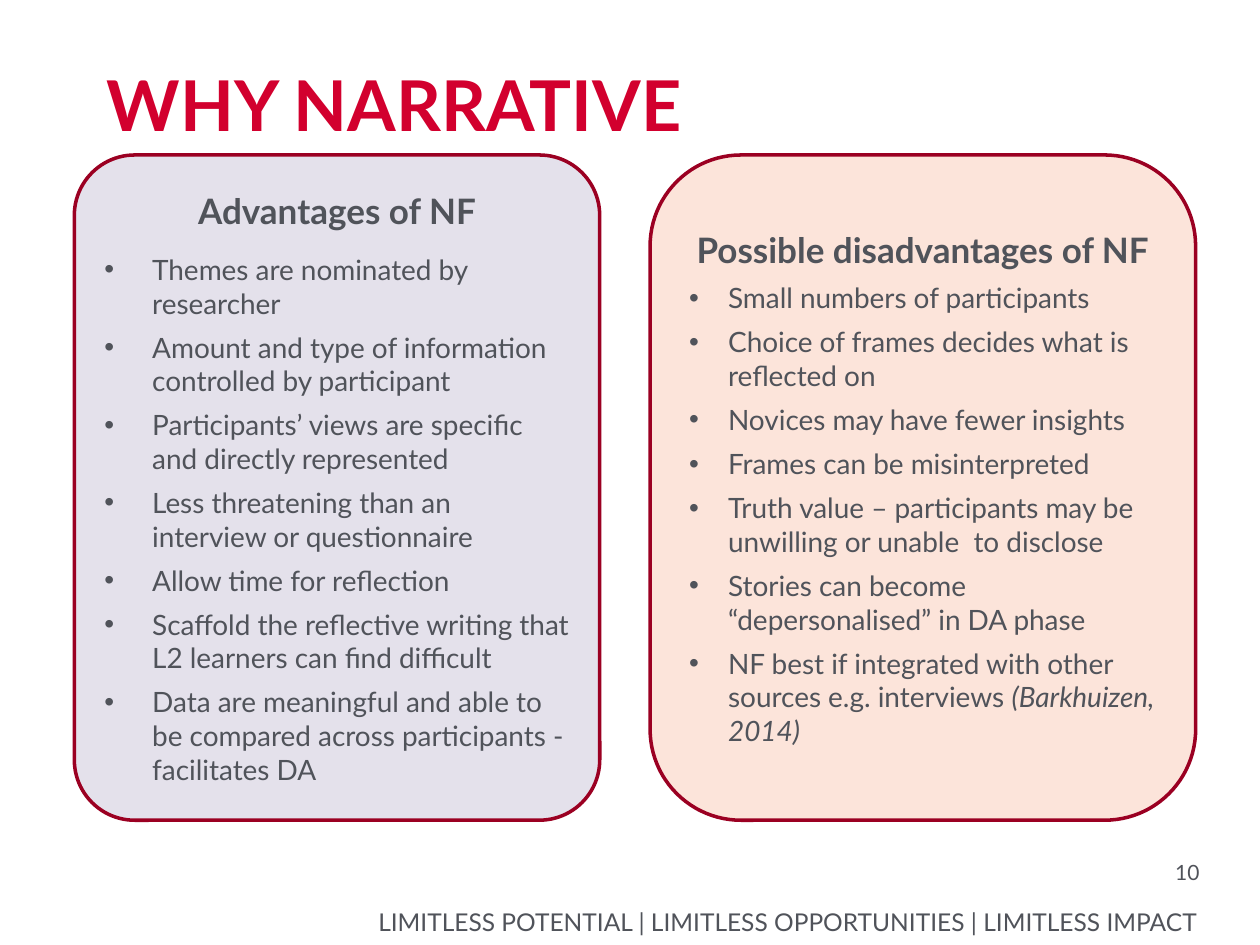
from dataclasses import dataclass

from lxml import etree
from pptx import Presentation
from pptx.dml.color import RGBColor
from pptx.enum.shapes import MSO_SHAPE
from pptx.enum.text import MSO_ANCHOR, MSO_AUTO_SIZE, PP_ALIGN
from pptx.oxml.ns import qn
from pptx.util import Inches, Pt


@dataclass(frozen=True)
class Theme:
    font: str = "Lato"
    text: str = "50535A"
    red: str = "D2002E"
    border: str = "9B0022"
    lilac: str = "E4E1EB"
    peach: str = "FCE4DA"
    title: int = 40
    heading: int = 20
    body: int = 16
    footer: int = 14
    number: int = 12


THEME = Theme()

ADVANTAGES = [
    "Themes are nominated by researcher",
    "Amount and type of information controlled by participant",
    "Participants’ views are specific and directly represented",
    "Less threatening than an interview or questionnaire",
    "Allow time for reflection",
    "Scaffold the reflective writing that L2 learners can find difficult",
    "Data are meaningful and able to be compared across participants - facilitates DA",
]
DISADVANTAGES = [
    "Small numbers of participants",
    "Choice of frames decides what is reflected on",
    "Novices may have fewer insights",
    "Frames can be misinterpreted",
    "Truth value – participants may be unwilling or unable  to disclose",
    "Stories can become “depersonalised” in DA phase",
    ("NF best if integrated with other sources e.g. interviews ", "(Barkhuizen, 2014)"),
]


def set_attrs(target, **values):
    for name, value in values.items():
        setattr(target, name, value)


def add_run(p, text, size, color=THEME.text, bold=False, italic=False):
    r = p.add_run()
    r.text = text
    set_attrs(r.font, name=THEME.font, size=Pt(size), bold=bold, italic=italic)
    r.font.color.rgb = RGBColor.from_string(color)


def set_bullet(p, indent):
    pPr = p._p.get_or_add_pPr()
    pPr.set("marL", str(Inches(indent)))
    pPr.set("indent", str(-Inches(indent)))
    etree.SubElement(pPr, qn("a:buFont")).set("typeface", "Arial")
    etree.SubElement(pPr, qn("a:buChar")).set("char", "•")


def add_text(s, box, text, size, color=THEME.text, bold=False,
             align=PP_ALIGN.LEFT, **frame):
    tf = s.shapes.add_textbox(*map(Inches, box)).text_frame
    set_attrs(tf, word_wrap=True, **frame)
    p = tf.paragraphs[0]
    p.alignment = align
    add_run(p, text, size, color, bold)


def add_title(s, box):
    add_text(s, box, "WHY NARRATIVE", THEME.title, THEME.red, bold=True)


def add_panel(s, box, fill, heading, points, indent, heading_gap, corner):
    sp = s.shapes.add_shape(MSO_SHAPE.ROUNDED_RECTANGLE, *map(Inches, box))
    sp.adjustments[0] = corner
    sp.shadow.inherit = False
    sp.fill.solid()
    sp.fill.fore_color.rgb = RGBColor.from_string(fill)
    sp.line.color.rgb = RGBColor.from_string(THEME.border)
    sp.line.width = Pt(2)
    tf = sp.text_frame
    set_attrs(tf, word_wrap=True, vertical_anchor=MSO_ANCHOR.MIDDLE)

    # Heading
    p = tf.paragraphs[0]
    set_attrs(p, alignment=PP_ALIGN.CENTER, space_after=Pt(heading_gap))
    add_run(p, heading, THEME.heading, bold=True)

    # Bullets; a tuple holds a plain part and an italic citation
    for point in points:
        p = tf.add_paragraph()
        set_attrs(p, alignment=PP_ALIGN.LEFT, space_after=Pt(6))
        set_bullet(p, indent)
        parts = (point,) if isinstance(point, str) else point
        for i, part in enumerate(parts):
            add_run(p, part, THEME.body, italic=i > 0)


def add_footer(s, number_box, motto_box):
    flush = dict(align=PP_ALIGN.RIGHT, margin_left=0, margin_right=0,
                 margin_top=0, margin_bottom=0)
    add_text(s, number_box, "10", THEME.number, **flush)
    # The bars are set between en spaces
    add_text(s, motto_box,
             "LIMITLESS POTENTIAL | LIMITLESS OPPORTUNITIES | LIMITLESS IMPACT",
             THEME.footer, vertical_anchor=MSO_ANCHOR.BOTTOM,
             auto_size=MSO_AUTO_SIZE.SHAPE_TO_FIT_TEXT, **flush)


def main():
    prs = Presentation()
    set_attrs(prs, slide_width=Inches(10), slide_height=Inches(7.5))
    s = prs.slides.add_slide(prs.slide_layouts[6])

    add_footer(s, (8.78, 6.82, 0.74, 0.28), (2.11, 7.19, 7.4, 0.24))
    add_title(s, (0.75, 0.44, 7.14, 0.77))

    # Two panels of equal height
    top, height = 1.23, 5.28
    add_panel(s, (0.59, top, 4.17, height), THEME.lilac, "Advantages of NF",
              ADVANTAGES, indent=0.38, heading_gap=12, corner=0.115)
    add_panel(s, (5.16, top, 4.33, height), THEME.peach,
              "Possible disadvantages of NF", DISADVANTAGES,
              indent=0.31, heading_gap=6, corner=0.1667)

    prs.save("out.pptx")


if __name__ == "__main__":
    main()
